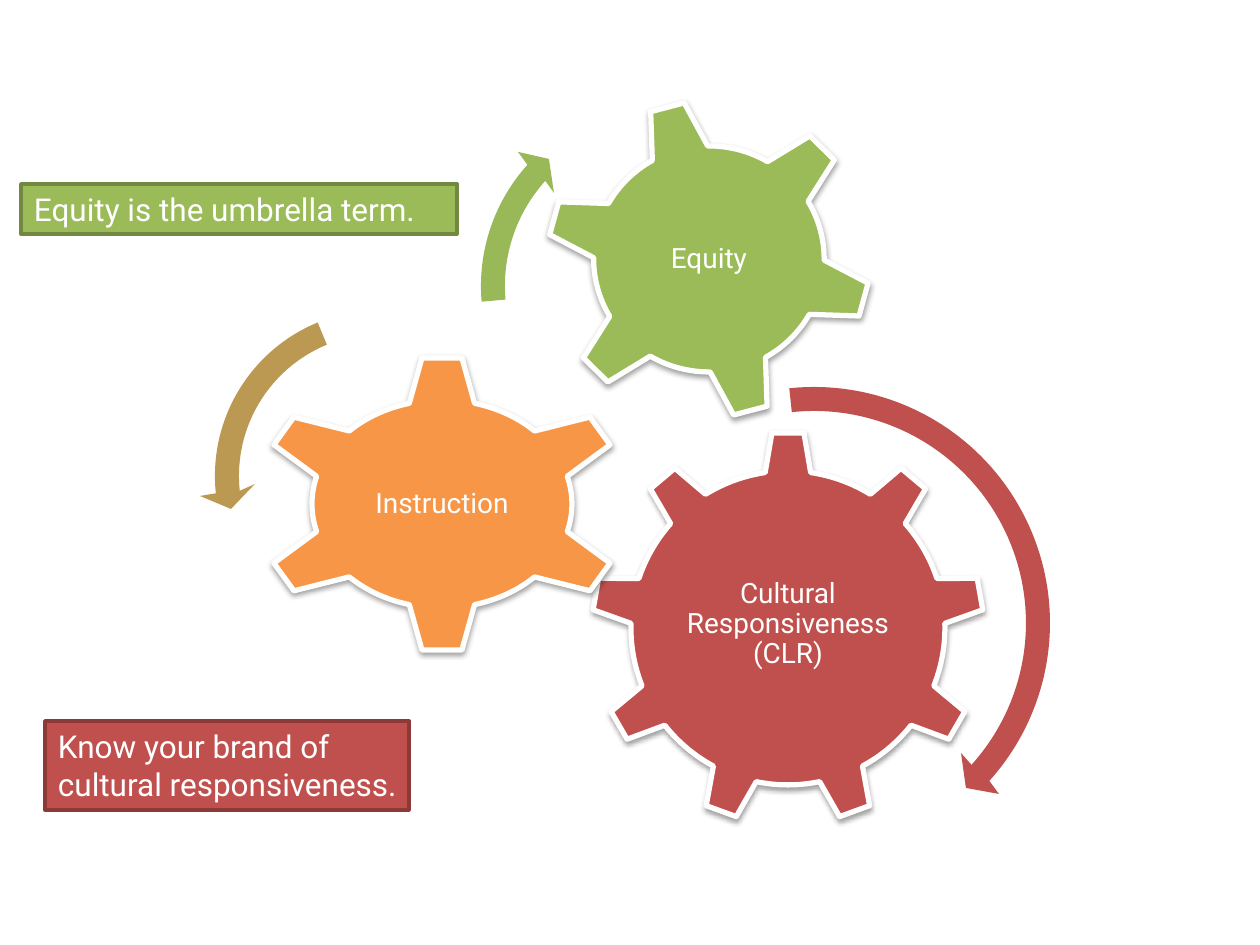
from dataclasses import dataclass
from math import atan, atan2, ceil, cos, hypot, pi, radians, sin, tan

from lxml.etree import SubElement
from pptx import Presentation
from pptx.dml.color import RGBColor
from pptx.enum.shapes import MSO_SHAPE
from pptx.enum.text import MSO_ANCHOR as ANCHOR, PP_ALIGN as ALIGN
from pptx.oxml import parse_xml
from pptx.oxml.ns import nsdecls, qn
from pptx.util import Pt

PX = 914400 // 126  # EMU in one px


@dataclass(frozen=True)
class Theme:
    font: str = "Roboto"
    gear_size: int = 16
    note_size: int = 18
    white: str = "FFFFFF"
    shadow: str = "000000"
    red: str = "C0504D"
    red_edge: str = "8C3A38"
    red_arrow: str = "BF504D"
    orange: str = "F79646"
    gold_arrow: str = "BB9952"
    green: str = "9BBB59"
    green_edge: str = "718840"
    green_arrow: str = "99B958"


theme = Theme()
prs = Presentation()
prs.slide_width, prs.slide_height = 1260 * PX, 945 * PX
slide = prs.slides.add_slide(prs.slide_layouts[6])


def outline(frame, centre, stretch, stops, fill):
    """Draw a filled outline in a frame; a stop is radius, angle and the sweep
    of the arc that leads to it (0 for a straight line)."""
    polar, curves = [], []
    for radius, angle, sweep in stops:
        if sweep:
            handle = 4 / 3 * tan(sweep / 4)
            reach, lean = radius * hypot(1, handle), atan(handle)
            curves.append(len(polar) - 1)
            polar += [(reach, angle - sweep + lean), (reach, angle - lean)]
        polar.append((radius, angle))
    points = [(round((centre[0] + stretch * r * cos(a)) * PX),
               round((centre[1] + r * sin(a)) * PX)) for r, a in polar]

    # The two frame corners only set the size, so their moves are taken out
    left, top, width, height = (length * PX for length in frame)
    builder = slide.shapes.build_freeform(left, top)
    builder.move_to(left + width, top + height)
    builder.move_to(*points[0])
    builder.add_line_segments(points[1:], close=True)
    shape = builder.convert_to_shape()
    route = shape._element.spPr.find(".//" + qn("a:path"))
    for corner in route.findall(qn("a:moveTo"))[:2]:
        route.remove(corner)
    lines = route.findall(qn("a:lnTo"))
    for first in curves:
        curve = parse_xml(f"<a:cubicBezTo {nsdecls('a')}/>")
        lines[first].addprevious(curve)
        for line in lines[first:first + 3]:
            curve.append(line[0])
            route.remove(line)

    shape.shadow.inherit = False
    shape.fill.solid()
    shape.fill.fore_color.rgb = RGBColor.from_string(fill)
    shape.line.fill.background()
    return shape


def write(shape, text, size, align, anchor, insets):
    frame = shape.text_frame
    frame.word_wrap = True
    frame.vertical_anchor = anchor
    (frame.margin_left, frame.margin_top,
     frame.margin_right, frame.margin_bottom) = (inset * PX for inset in insets)
    frame.text = text
    paragraph = frame.paragraphs[0]
    paragraph.alignment = align
    font = paragraph.runs[0].font
    font.name, font.size = theme.font, Pt(size)
    font.color.rgb = RGBColor.from_string(theme.white)
    return paragraph


# Gears: label, fill, frame, text insets, centre, teeth, turn in degrees, stretch,
# then body radius, tooth half width at the body, tip radius, tip half width
gears = [
    ("Cultural Responsiveness (CLR)", theme.red, (592, 432, 392, 392),
     (82, 95, 82, 102), (788, 628), 9, 0, 1, 157, 23, 195, 16),
    ("Instruction", theme.orange, (255, 355, 374, 299),
     (74, 76, 74, 76), (442, 504), 6, 0, 1.25, 104, 27, 146, 16),
    ("Equity", theme.green, (507, 63, 404, 392),
     (96, 96, 96, 96), (709, 259), 6, -15, 1.02, 113, 29, 157, 17),
]
for (label, fill, frame, insets, centre, teeth, turn, stretch,
     body, root, tip, tip_half) in gears:
    root_angle, tip_angle = atan2(root, body), atan2(tip_half, tip)
    tip_radius = hypot(tip, tip_half)
    pitch = 2 * pi / teeth
    gap = pitch - 2 * root_angle
    first = radians(turn - 90)
    stops = [(body, first - root_angle, 0)]
    for tooth in range(teeth):
        middle = first + tooth * pitch
        stops += [(tip_radius, middle - tip_angle, 0),
                  (tip_radius, middle + tip_angle, 0),
                  (body, middle + root_angle, 0),
                  (body, middle + root_angle + gap, gap)]
    gear = outline(frame, centre, stretch, stops, fill)
    gear.line.color.rgb = RGBColor.from_string(theme.white)
    gear.line.width = Pt(3)
    effects = gear._element.spPr.find(qn("a:effectLst"))
    shadow = SubElement(effects, qn("a:outerShdw"), blurRad=str(Pt(3.1)),
                        dist=str(Pt(1.6)), dir="5400000", rotWithShape="0")
    shade = SubElement(shadow, qn("a:srgbClr"), val=theme.shadow)
    SubElement(shade, qn("a:alpha"), val="37000")
    paragraph = write(gear, label, theme.gear_size, ALIGN.CENTER, ANCHOR.MIDDLE, insets)
    paragraph.line_spacing = 0.9

# Turning arrows: fill, frame, centre, outer radius, start and end angle, head corners
BAND = 24
turning_arrows = [
    (theme.red_arrow, (564, 372, 501, 501), (814, 623), 236, -96, 42,
     [(999, 794), (966, 788), (961, 753)]),
    (theme.gold_arrow, (199, 294, 364, 364), (381, 476), 166, 247.6, 174,
     [(200, 496), (231, 509), (255, 484)]),
    (theme.green_arrow, (465, 89, 393, 393), (662, 286), 181, 175, 222,
     [(518, 152), (549, 159), (554, 193)]),
]
for fill, frame, centre, radius, start, end, head in turning_arrows:
    pieces = ceil(abs(end - start) / 90)
    sweep = radians(end - start) / pieces
    angles = [radians(start) + sweep * i for i in range(pieces + 1)]
    stops = [(radius, angles[0], 0)]
    stops += [(radius, angle, sweep) for angle in angles[1:]]
    for x, y in head:
        dx, dy = x - centre[0], y - centre[1]
        stops.append((hypot(dx, dy), atan2(dy, dx), 0))
    stops.append((radius - BAND, angles[-1], 0))
    stops += [(radius - BAND, angle, -sweep) for angle in angles[-2::-1]]
    outline(frame, centre, 1, stops, fill)

# Notes: text, left, top, width, height, fill, edge
notes = [
    ("Equity is the umbrella term.", 21, 184, 436, 50, theme.green, theme.green_edge),
    ("Know your brand of cultural responsiveness.", 45, 721, 364, 89,
     theme.red, theme.red_edge),
]
for text, left, top, width, height, fill, edge in notes:
    note = slide.shapes.add_shape(MSO_SHAPE.RECTANGLE, left * PX, top * PX,
                                  width * PX, height * PX)
    note.shadow.inherit = False
    note.fill.solid()
    note.fill.fore_color.rgb = RGBColor.from_string(fill)
    note.line.color.rgb = RGBColor.from_string(edge)
    note.line.width = Pt(2)
    write(note, text, theme.note_size, ALIGN.LEFT, ANCHOR.TOP, (13, 6, 12, 6))

prs.save("out.pptx")
